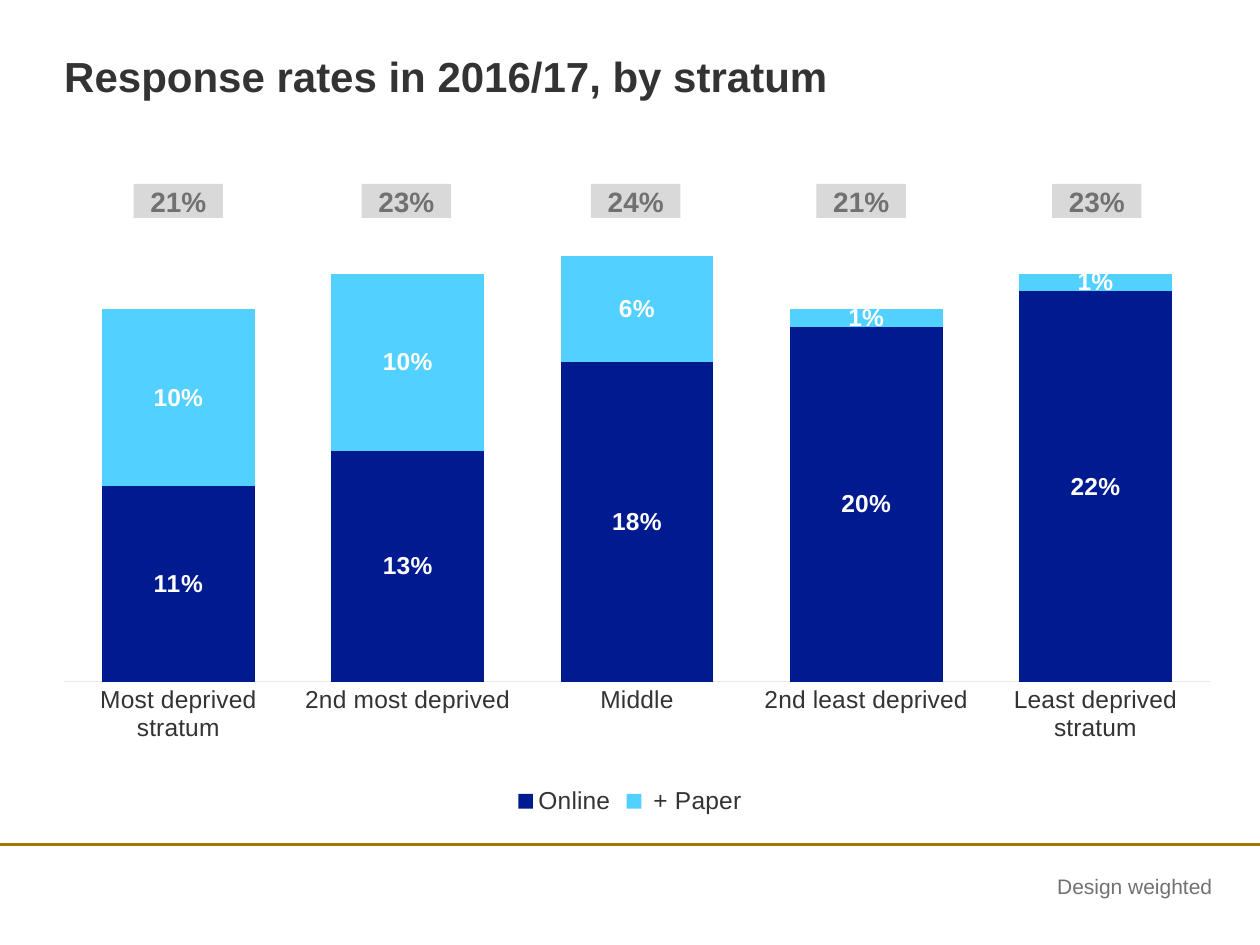
"""Build a slide of stacked response rates by stratum."""
from dataclasses import dataclass
from typing import Any

from lxml import etree
from pptx import Presentation
from pptx.chart import data as cd
from pptx.dml.color import RGBColor
from pptx.enum import chart as ch, shapes as sh, text as tx
from pptx.oxml import ns
from pptx.util import Inches, Pt

NAVY = RGBColor(0x00, 0x1A, 0x90)
SKY = RGBColor(0x52, 0xD0, 0xFF)
GOLD = RGBColor(0xA0, 0x78, 0x00)
DARK = RGBColor(0x33, 0x33, 0x33)
GREY = RGBColor(0x71, 0x71, 0x71)
PALE = RGBColor(0xD9, 0xD9, 0xD9)
RULE = RGBColor(0xEA, 0xEA, 0xEA)
WHITE = RGBColor(0xFF, 0xFF, 0xFF)


@dataclass
class Total:
    left: float
    label: str


@dataclass
class Series:
    name: str
    vals: tuple
    color: RGBColor


STRATA = ("Most deprived stratum", "2nd most deprived", "Middle",
          "2nd least deprived", "Least deprived stratum")
SERIES = (Series("Online", (0.11, 0.13, 0.18, 0.2, 0.22), NAVY),
          Series(" + Paper", (0.1, 0.1, 0.06, 0.01, 0.01), SKY))
TOTALS = (Total(1.06, "21%"), Total(2.87, "23%"), Total(4.69, "24%"),
          Total(6.48, "21%"), Total(8.35, "23%"))
PLOT = {"x": 0.022, "y": 0.125, "w": 0.968, "h": 0.667}


def apply(obj: Any, **vals: Any) -> None:
    for key, val in vals.items():
        setattr(obj, key, val)


def style(font: Any, size: int, color: RGBColor, bold: bool = False) -> None:
    apply(font, name="Arial", size=Pt(size), bold=bold)
    font.color.rgb = color


def place(shape: Any, left: float, top: float, width: float, height: float) -> None:
    apply(shape, left=Inches(left), top=Inches(top),
          width=Inches(width), height=Inches(height))


def write(shape: Any, words: str, size: int, color: RGBColor, bold: bool = False,
          align: Any = tx.PP_ALIGN.LEFT, anchor: Any = tx.MSO_ANCHOR.TOP,
          inset: float = 0) -> None:
    frame = shape.text_frame
    apply(frame, text=words, word_wrap=True, auto_size=tx.MSO_AUTO_SIZE.NONE,
          margin_left=0, margin_right=0, margin_top=Inches(inset),
          margin_bottom=0, vertical_anchor=anchor)
    para = frame.paragraphs[0]
    para.alignment = align
    style(para.runs[0].font, size, color, bold)


def add_total(slide: Any, item: Total) -> None:
    box = slide.shapes.add_shape(
        sh.MSO_SHAPE.RECTANGLE, Inches(item.left), Inches(1.46),
        Inches(0.71), Inches(0.27))
    box.shadow.inherit = False
    box.fill.solid()
    box.fill.fore_color.rgb = PALE
    box.line.fill.background()
    write(box, item.label, 16, GREY, True, tx.PP_ALIGN.CENTER, tx.MSO_ANCHOR.MIDDLE)


def add_rule(slide: Any) -> None:
    line = slide.shapes.add_connector(
        sh.MSO_CONNECTOR.STRAIGHT, 0, Inches(6.7), Inches(10), Inches(6.7))
    line.line.color.rgb = GOLD
    line.line.width = Pt(1.5)
    etree.SubElement(line._element.spPr, ns.qn("a:effectLst"))


def set_plot(chart: Any) -> None:
    area = chart._chartSpace.chart.plotArea
    for old in area.findall(ns.qn("c:layout")):
        area.remove(old)
    lay = etree.Element(ns.qn("c:layout"))
    area.insert(0, lay)
    man = etree.SubElement(lay, ns.qn("c:manualLayout"))
    vals = {"layoutTarget": "inner", "xMode": "edge", "yMode": "edge", **PLOT}
    for tag, val in vals.items():
        etree.SubElement(man, ns.qn(f"c:{tag}")).set("val", str(val))


def add_rates(slide: Any) -> None:
    data = cd.CategoryChartData(number_format="0%")
    data.categories = STRATA
    for item in SERIES:
        data.add_series(item.name, item.vals)
    chart = slide.shapes.add_chart(
        ch.XL_CHART_TYPE.COLUMN_STACKED, Inches(0.3), Inches(1.23),
        Inches(9.4), Inches(5.28), data).chart
    apply(chart, has_title=False, has_legend=True)
    style(chart.font, 10, GREY)
    apply(chart.legend, position=ch.XL_LEGEND_POSITION.BOTTOM,
          include_in_layout=False)
    style(chart.legend.font, 14, DARK)
    apply(chart.value_axis, visible=False, has_major_gridlines=False,
          minimum_scale=0, maximum_scale=0.25)
    axis = chart.category_axis
    axis.major_tick_mark = ch.XL_TICK_MARK.NONE
    axis.format.line.color.rgb = RULE
    axis.format.line.width = Pt(0.75)
    style(axis.tick_labels.font, 14, DARK)
    plot = chart.plots[0]
    apply(plot, gap_width=50, overlap=100, vary_by_categories=False)
    for item, bars in zip(SERIES, plot.series):
        bars.format.fill.solid()
        bars.format.fill.fore_color.rgb = item.color
        apply(bars.data_labels, show_value=True, number_format="0%",
              number_format_is_linked=False)
        style(bars.data_labels.font, 14, WHITE, True)
    set_plot(chart)


def main() -> None:
    deck = Presentation()
    apply(deck, slide_width=Inches(10), slide_height=Inches(7.5))
    slide = deck.slides.add_slide(deck.slide_layouts[5])
    add_rule(slide)
    add_rates(slide)
    title = slide.shapes.title
    place(title, 0.51, 0.36, 9, 0.8)
    write(title, "Response rates in 2016/17, by stratum", 24, DARK, True, inset=0.04)
    note = slide.shapes.add_textbox(
        Inches(8.39), Inches(6.93), Inches(1.59), Inches(0.2))
    write(note, "Design weighted", 12, GREY)
    for item in TOTALS:
        add_total(slide, item)
    deck.save("out.pptx")


if __name__ == "__main__":
    main()
